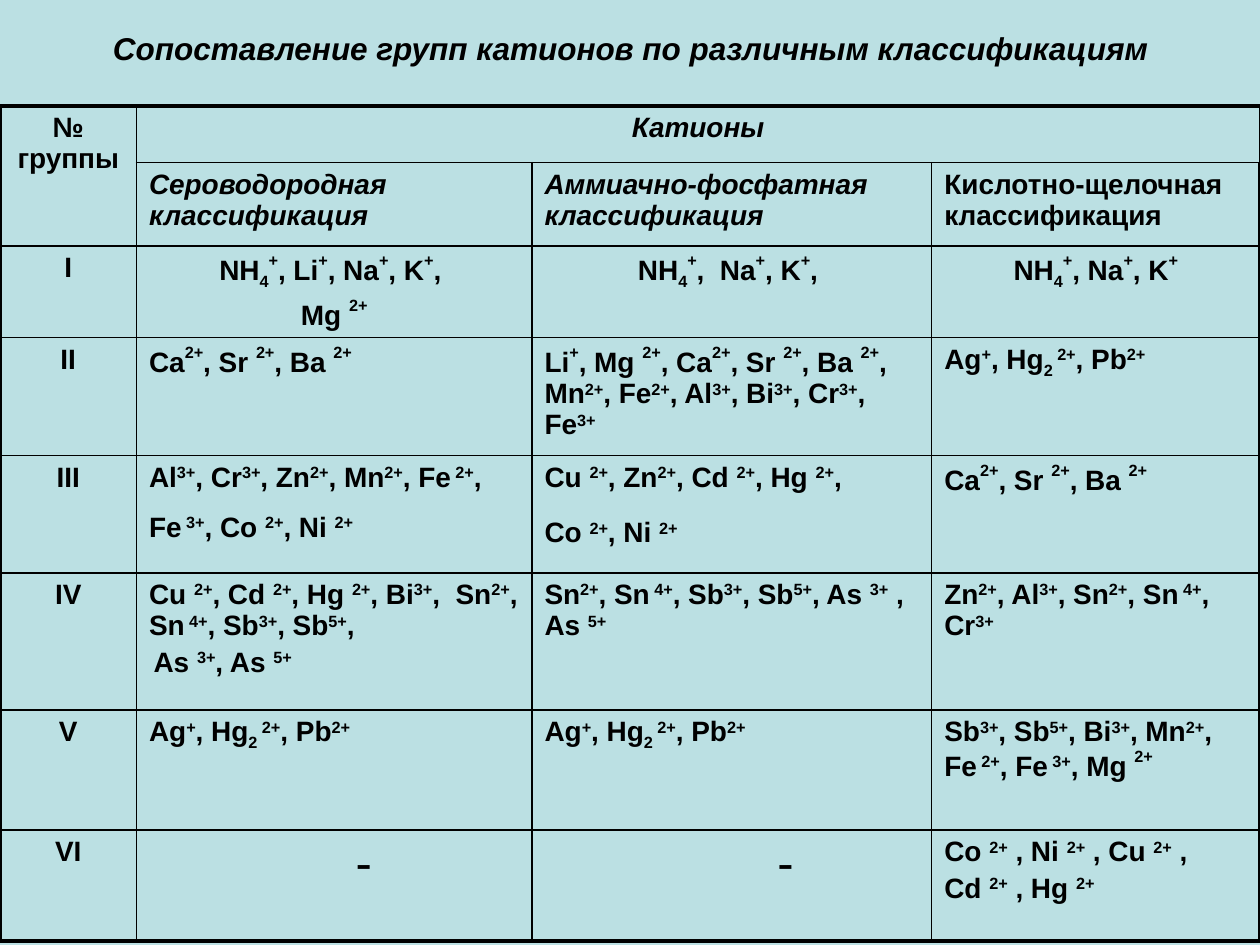
from dataclasses import dataclass
from lxml import etree
from pptx import Presentation
from pptx.dml.color import RGBColor
from pptx.enum import text as tx
from pptx.oxml import ns
from pptx.util import Pt


@dataclass(frozen=True)
class Theme:
    font: str = "Arial"
    back: str = "BBE0E3"
    ink: str = "000000"
    head: float = 18
    body: float = 16
    large: float = 28
    gap: float = 3.2
    thin: float = 1
    thick: float = 2.25


THEME = Theme()
BASE = {"^": 50, "~": 30, "_": -25}
COLS = [78, 226, 228.5, 187.5]
ROWS = [32.5, 47.5, 52, 67.5, 67, 78.5, 68.5, 63.5]
DASH = {(7, 1): 118, (7, 2): 133}
CALCIUM = "Ca|^2+|, Sr |^2+|, Ba |^2+"
SILVER = "Ag|~+|, Hg|_2 |~2+|, Pb|~2+"
CELLS = [
    ["№ группы", "Катионы", "", ""],
    ["", "Сероводородная классификация", "Аммиачно-фосфатная классификация",
     "Кислотно-щелочная классификация"],
    ["I", "NH|_4|^+|, Li|^+|, Na|^+|, K|^+|, \nMg |^2+",
     "NH|_4|^+|,  Na|^+|, K|^+|, ", "NH|_4|^+|, Na|^+|, K|^+"],
    ["II", CALCIUM,
     "Li|^+|, Mg |^2+|, " + CALCIUM
     + "|, Mn|~2+|, Fe|~2+|, Al|~3+|, Bi|~3+|, Cr|~3+|, Fe|~3+",
     SILVER],
    ["III",
     "Al|~3+|, Cr|~3+|, Zn|~2+|, Mn|~2+|, Fe|~ 2+|, Fe|~ 3+|, Co |~2+|, Ni |~2+|# ",
     "Cu |~2+|, Zn|~2+|, Cd |~2+|, Hg |~2+|,\nCo |~2+|, Ni |~2+|# ", CALCIUM],
    ["IV",
     "Cu |~2+|, Cd |~2+|, Hg |~2+|, Bi|~3+|,  Sn|~2+|, Sn|~ 4+|, Sb|~3+|, Sb|~5+|,"
     "\n~ |As |~3+|, As |~5+",
     "Sn|~2+|, Sn|~ 4+|, Sb|~3+|, Sb|~5+|, As |~3+| , As |~5+",
     "Zn|~2+|, Al|~3+|, Sn|~2+|, Sn|~ 4+|, Cr|~3+"],
    ["V", SILVER, SILVER,
     "Sb|~3+|, Sb|~5+|, Bi|~3+|, Mn|~2+|, Fe|~ 2+|, Fe|~ 3+|, Mg |^2+"],
    ["VI", "#-", "#-",
     "Co |~2+| , Ni |~2+| , Cu |~2+| ,\nCd |~2+| , Hg |~2+"],
]


def style(run, size, bold=True, slant=False):
    font = run.font
    font.name, font.size = THEME.font, Pt(size)
    font.bold, font.italic = bold, slant
    font.color.rgb = RGBColor.from_string(THEME.ink)


def title(slide, box, words):
    shape = slide.shapes.title
    shape.left, shape.top, shape.width, shape.height = map(Pt, box)
    frame = shape.text_frame
    frame.text = words
    frame.vertical_anchor = tx.MSO_ANCHOR.MIDDLE
    para = frame.paragraphs[0]
    para.alignment = tx.PP_ALIGN.CENTER
    style(para.runs[0], THEME.head, slant=True)


def write(para, line, slant):
    for part in line.split("|"):
        mark = part[0]
        run = para.add_run()
        run.text = part[1:] if mark in "^~_#" else part
        large = mark == "#"
        style(run, THEME.large if large else THEME.body, part != "#-", slant)
        if mark in BASE:
            run.font._element.set("baseline", str(BASE[mark] * 1000))


def border(cell, row, col):
    props = cell._tc.get_or_add_tcPr()
    edges = {"L": col == 0, "R": col == len(COLS) - 1,
             "T": row == 0, "B": row == len(ROWS) - 1}
    for side, outer in edges.items():
        width = THEME.thick if outer else THEME.thin
        line = etree.SubElement(props, ns.qn("a:ln" + side), w=str(Pt(width)))
        fill = etree.SubElement(line, ns.qn("a:solidFill"))
        etree.SubElement(fill, ns.qn("a:srgbClr"), val=THEME.ink)


def fill(cell, row, col):
    border(cell, row, col)
    cell.fill.background()
    cell.margin_left = cell.margin_right = Pt(7.2)
    cell.margin_top = cell.margin_bottom = Pt(3.6)
    if not CELLS[row][col]:
        return
    frame = cell.text_frame
    mid = col == 0 or row in (0, 2)
    slant = (row, col) in ((0, 1), (1, 1), (1, 2))
    for num, line in enumerate(CELLS[row][col].split("\n")):
        para = frame.add_paragraph() if num else frame.paragraphs[0]
        para.alignment = tx.PP_ALIGN.CENTER if mid else tx.PP_ALIGN.LEFT
        if num:
            para.space_before = Pt(THEME.gap)
        if (row, col) in DASH:
            para._p.get_or_add_pPr().set("marL", str(Pt(DASH[row, col])))
        write(para, line, slant)


def grid(slide, box):
    frame = slide.shapes.add_table(len(ROWS), len(COLS), *map(Pt, box))
    table = frame.table
    table.first_row = table.horz_banding = False
    for col, width in zip(table.columns, COLS):
        col.width = Pt(width)
    for row, height in zip(table.rows, ROWS):
        row.height = Pt(height)
    table.cell(0, 0).merge(table.cell(1, 0))
    table.cell(0, 1).merge(table.cell(0, 3))
    for row in range(len(ROWS)):
        for col in range(len(COLS)):
            fill(table.cell(row, col), row, col)


def main():
    deck = Presentation()
    deck.slide_width, deck.slide_height = Pt(720), Pt(540)
    slide = deck.slides.add_slide(deck.slide_layouts[5])
    back = slide.background.fill
    back.solid()
    back.fore_color.rgb = RGBColor.from_string(THEME.back)
    title(slide, (36.5, 0, 648, 55),
          "Сопоставление групп катионов по различным классификациям")
    grid(slide, (0, 60.5, sum(COLS), sum(ROWS)))
    deck.save("out.pptx")


if __name__ == "__main__":
    main()
